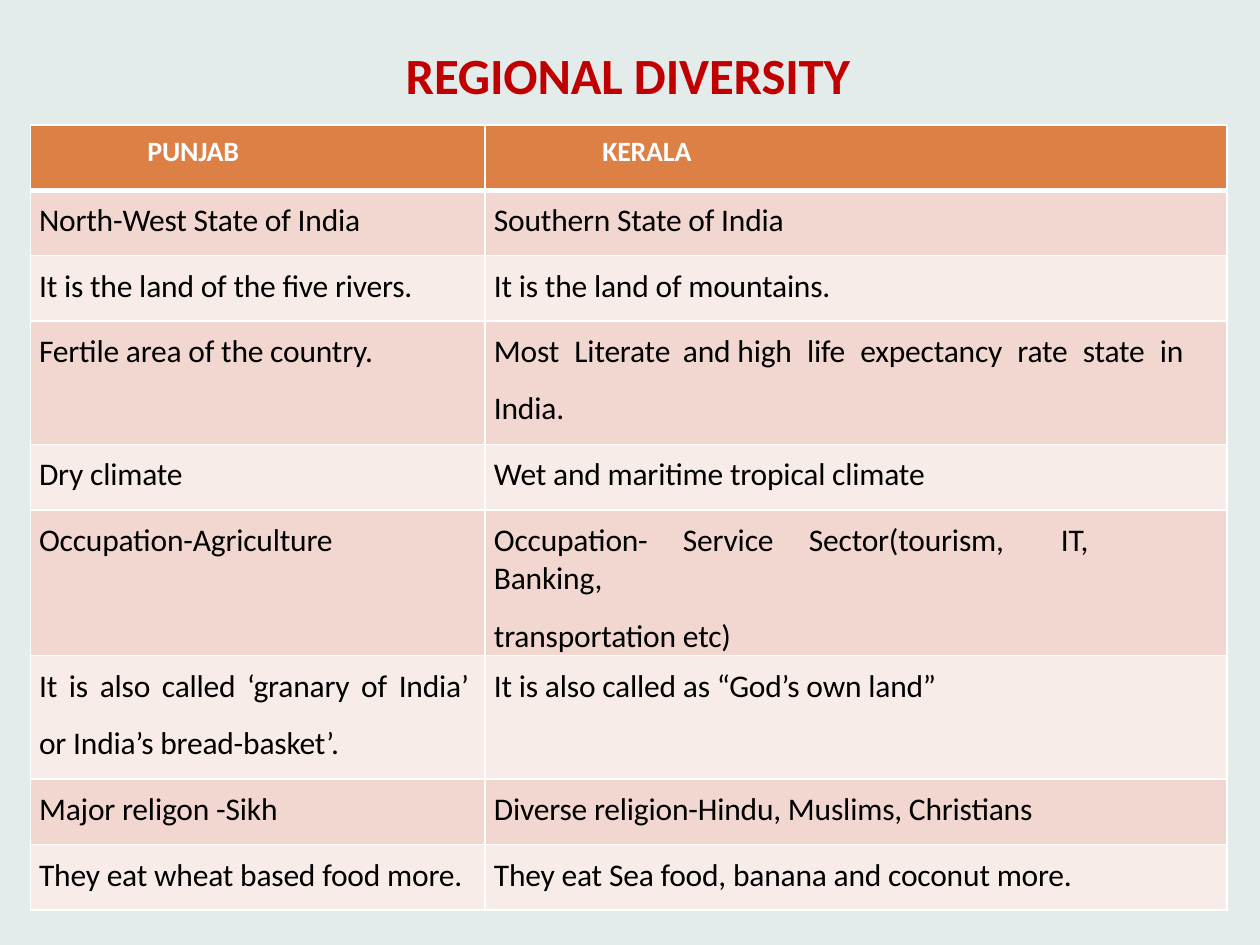
from dataclasses import dataclass

from lxml import etree
from pptx import Presentation
from pptx.dml.color import RGBColor
from pptx.enum.text import MSO_ANCHOR, MSO_AUTO_SIZE, PP_ALIGN
from pptx.oxml.ns import qn
from pptx.util import Inches, Pt

TOP = MSO_ANCHOR.TOP
LEFT = PP_ALIGN.LEFT
NO_AUTOFIT = MSO_AUTO_SIZE.NONE
FONT = "Calibri"
WHITE, BLACK, RED = "FFFFFF", "000000", "C00000"
BACKGROUND, ORANGE = "E4ECEB", "DD8046"
BANDS = ("F1D7CF", "F8ECE9")
COLUMN_WIDTHS = (3.61, 5.89)
ROW_HEIGHT, LINE_HEIGHT = 0.52, 0.46


@dataclass(frozen=True)
class Segment:
    """Words whose spaces are widened by the given points."""

    text: str
    gap: float = 0


@dataclass(frozen=True)
class Line:
    """One paragraph with its segments and tab stops in inches."""

    segments: tuple[Segment, ...]
    tabs: tuple[float, ...] = ()


def plain(*texts: str) -> tuple[Line, ...]:
    """Return one unstretched line for each text."""
    return tuple(Line((Segment(text),)) for text in texts)


HEADER = (plain("PUNJAB"), plain("KERALA"))
COMPARISONS = (
    (plain("North-West State of India"), plain("Southern State of India")),
    (plain("It is the land of the five rivers."), plain("It is the land of mountains.")),
    (
        plain("Fertile area of the country."),
        (
            Line(
                (
                    Segment("Most Literate\tand", 4.5),
                    Segment(" high"),
                    Segment(" life expectancy rate state in", 4.5),
                ),
                (1.73,),
            ),
            *plain("India."),
        ),
    ),
    (plain("Dry climate"), plain("Wet and maritime tropical climate")),
    (
        plain("Occupation-Agriculture"),
        (
            Line(
                (Segment("Occupation-\tService\tSector(tourism,\tIT,\tBanking,"),),
                (1.59, 2.6, 4.45, 4.95),
            ),
            *plain("transportation etc)"),
        ),
    ),
    (
        (
            Line((Segment("It is also called ‘granary of India’", 2.5),)),
            *plain("or India’s bread-basket’."),
        ),
        plain("It is also called as “God’s own land”"),
    ),
    (plain("Major religon -Sikh"), plain("Diverse religion-Hindu, Muslims, Christians")),
    (
        plain("They eat wheat based food more."),
        plain("They eat Sea food, banana and coconut more."),
    ),
)


def color(value: str) -> RGBColor:
    """Convert a hex string to a colour."""
    return RGBColor.from_string(value)


def add_text(paragraph, text: str, *, size: float, text_color: str, bold: bool = False,
             spacing: float = -0.1) -> None:
    """Append a formatted run to a paragraph."""
    run = paragraph.add_run()
    run.text = text
    run.font.name = FONT
    run.font.size = Pt(size)
    run.font.bold = bold
    run.font.color.rgb = color(text_color)
    run.font._element.set("spc", str(round(spacing * 100)))


def write_line(paragraph, line: Line, *, indent: float, **text_format) -> None:
    """Write a line with its indent, tab stops and word gaps."""
    properties = paragraph._p.get_or_add_pPr()
    properties.set("marL", str(Inches(indent)))
    properties.set("indent", "0")
    if line.tabs:
        tab_list = etree.SubElement(properties, qn("a:tabLst"))
        for position in line.tabs:
            etree.SubElement(tab_list, qn("a:tab"), pos=str(Inches(position)), algn="l")
    paragraph.alignment = LEFT
    for segment in line.segments:
        if not segment.gap:
            add_text(paragraph, segment.text, **text_format)
            continue
        for index, word in enumerate(segment.text.split(" ")):
            if index:
                add_text(paragraph, " ", spacing=segment.gap, **text_format)
            if word:
                add_text(paragraph, word, **text_format)


def set_borders(cell, *, top: float, bottom: float) -> None:
    """Draw white borders around a cell."""
    properties = cell._tc.get_or_add_tcPr()
    for side, width in (("L", 1), ("R", 1), ("T", top), ("B", bottom)):
        border = etree.SubElement(properties, qn(f"a:ln{side}"), w=str(Pt(width)))
        fill = etree.SubElement(border, qn("a:solidFill"))
        etree.SubElement(fill, qn("a:srgbClr"), val=WHITE)


def write_cell(cell, lines: tuple[Line, ...], *, fill: str, margin_top: float,
               top: float = 1, bottom: float = 1, **text_format) -> None:
    """Fill a table cell with its lines."""
    set_borders(cell, top=top, bottom=bottom)
    cell.fill.solid()
    cell.fill.fore_color.rgb = color(fill)
    cell.margin_left = cell.margin_right = cell.margin_bottom = 0
    cell.margin_top = Inches(margin_top)
    cell.vertical_anchor = TOP
    frame = cell.text_frame
    for index, line in enumerate(lines):
        paragraph = frame.add_paragraph() if index else frame.paragraphs[0]
        write_line(paragraph, line, **text_format)
        if index:
            paragraph.space_before = Pt(10.8)


def add_title(slide, text: str) -> None:
    """Place and format the slide title."""
    title = slide.shapes.title
    title.left, title.top = Inches(3.21), Inches(0.33)
    title.width, title.height = Inches(3.59), Inches(0.51)
    frame = title.text_frame
    frame.margin_left = frame.margin_right = frame.margin_bottom = 0
    frame.margin_top = Inches(0.02)
    frame.vertical_anchor = TOP
    frame.auto_size = NO_AUTOFIT
    write_line(frame.paragraphs[0], *plain(text), indent=0.01, size=29, text_color=RED, bold=True)


def add_comparison_table(slide) -> None:
    """Add the table that compares the two states."""
    heights = [ROW_HEIGHT] + [
        ROW_HEIGHT + LINE_HEIGHT * (max(map(len, row)) - 1) for row in COMPARISONS
    ]
    table = slide.shapes.add_table(
        len(heights), len(COLUMN_WIDTHS), Inches(0.24), Inches(0.99),
        Inches(sum(COLUMN_WIDTHS)), Inches(sum(heights)),
    ).table
    table.first_row = table.horz_banding = False
    for column, width in zip(table.columns, COLUMN_WIDTHS):
        column.width = Inches(width)
    for row, height in zip(table.rows, heights):
        row.height = Inches(height)
    for column_index, lines in enumerate(HEADER):
        write_cell(table.cell(0, column_index), lines, fill=ORANGE, margin_top=0.08,
                   bottom=3, indent=0.93, size=16, text_color=WHITE, bold=True)
    for row_index, row in enumerate(COMPARISONS):
        for column_index, lines in enumerate(row):
            write_cell(table.cell(row_index + 1, column_index), lines,
                       fill=BANDS[row_index % 2], margin_top=0.09,
                       top=1 if row_index else 3, indent=0.07, size=18, text_color=BLACK)


def main() -> None:
    """Build and save the presentation."""
    presentation = Presentation()
    presentation.slide_width, presentation.slide_height = Inches(10), Inches(7.5)
    slide = presentation.slides.add_slide(presentation.slide_layouts[5])
    slide.background.fill.solid()
    slide.background.fill.fore_color.rgb = color(BACKGROUND)
    add_title(slide, "REGIONAL DIVERSITY")
    add_comparison_table(slide)
    presentation.save("out.pptx")


if __name__ == "__main__":
    main()
